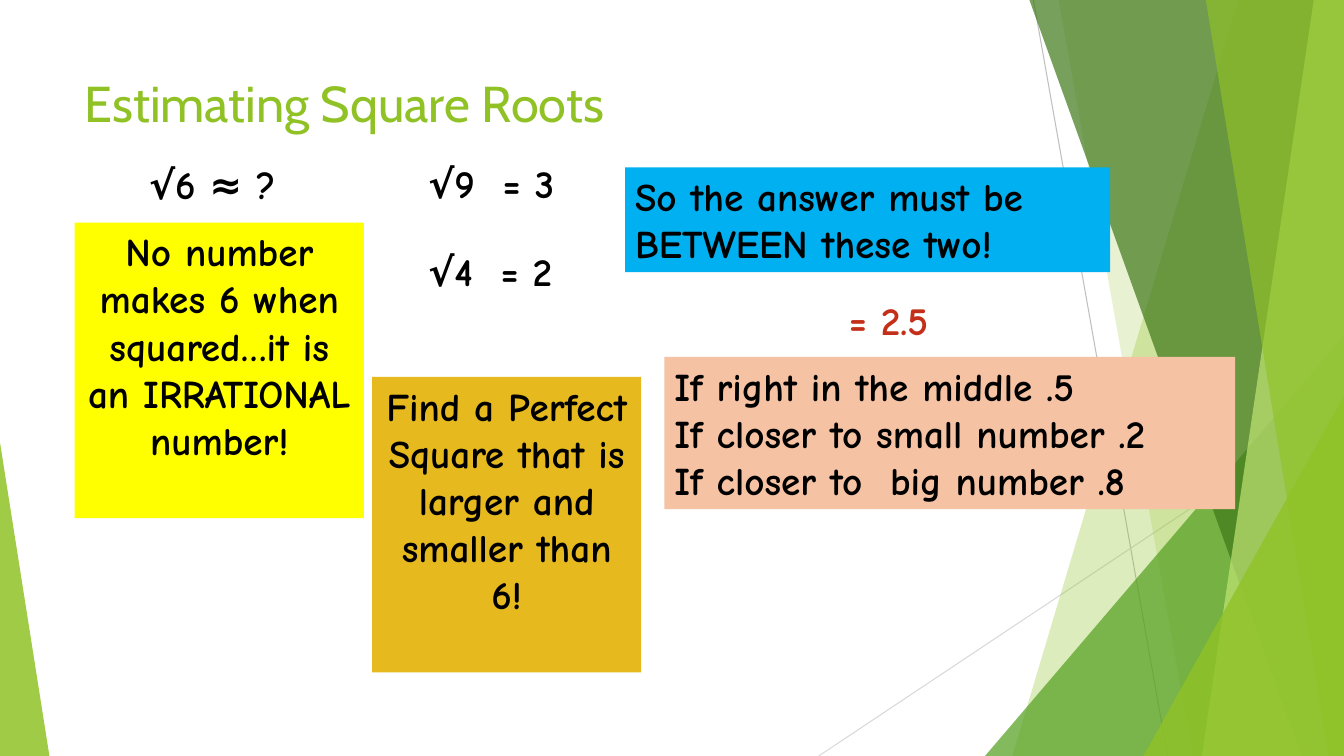
import pptx
import pptx.dml.color
import pptx.enum.shapes
import pptx.enum.text
import pptx.oxml.ns
import pptx.util
from lxml import etree

Inches = pptx.util.Inches
ALIGN = pptx.enum.text.PP_ALIGN
SHAPES = pptx.enum.shapes.MSO_SHAPE
WIDTH, HEIGHT = 13.33, 7.5

COLORS = {
    "green": "90C226",
    "leaf": "54A021",
    "forest": "3F7819",
    "lime": "C0E474",
    "gray": "BFBFBF",
    "light gray": "D9D9D9",
    "black": "000000",
    "red": "C42F1A",
    "yellow": "FFFF00",
    "gold": "E6B91E",
    "blue": "00B0F0",
    "peach": "F5C2A3",
}


class SlideBuilder:
    """Holds the style and the current slide, and adds elements to it."""

    title_font = "Cabin"
    body_font = "Comic Neue"
    title_size = 36
    body_size = 28

    def __init__(self, slide):
        self.slide = slide

    def color(self, name):
        return pptx.dml.color.RGBColor.from_string(COLORS[name])

    def paint(self, shape, color, opacity=100):
        shape.shadow.inherit = False
        shape.line.fill.background()
        shape.fill.solid()
        shape.fill.fore_color.rgb = self.color(color)
        if opacity < 100:
            qn = pptx.oxml.ns.qn
            fill_element = shape._element.spPr.find(qn("a:solidFill"))
            alpha = etree.SubElement(fill_element[0], qn("a:alpha"))
            alpha.set("val", str(opacity * 1000))

    def line(self, start, end, color):
        connector = self.slide.shapes.add_connector(
            pptx.enum.shapes.MSO_CONNECTOR.STRAIGHT,
            *map(Inches, (*start, *end)))
        connector.line.color.rgb = self.color(color)
        connector.line.width = pptx.util.Pt(0.75)
        properties = connector._element.spPr
        etree.SubElement(properties, pptx.oxml.ns.qn("a:effectLst"))

    def band(self, top_left, bottom_left, color, opacity):
        corners = [(WIDTH, 0), (WIDTH, HEIGHT), (bottom_left, HEIGHT)]
        builder = self.slide.shapes.build_freeform(Inches(top_left), 0)
        builder.add_line_segments(
            [(Inches(x), Inches(y)) for x, y in corners], close=True)
        self.paint(builder.convert_to_shape(), color, opacity)

    def triangle(self, left, top, width, apex, color, opacity):
        shape = self.slide.shapes.add_shape(
            SHAPES.ISOSCELES_TRIANGLE, Inches(left), Inches(top),
            Inches(width), Inches(HEIGHT - top))
        shape.adjustments[0] = apex
        self.paint(shape, color, opacity)

    def set_text(self, shape, lines, color, font, size, bold, align):
        frame = shape.text_frame
        frame.word_wrap = True
        frame.vertical_anchor = pptx.enum.text.MSO_ANCHOR.TOP
        frame.text = "\n".join(lines)
        for paragraph in frame.paragraphs:
            paragraph.alignment = align
            paragraph.font.name = font
            paragraph.font.size = pptx.util.Pt(size)
            paragraph.font.bold = bold
            paragraph.font.color.rgb = self.color(color)

    def title(self, text, box):
        shape = self.slide.shapes.add_textbox(*map(Inches, box))
        self.set_text(shape, [text], "green", self.title_font,
                      self.title_size, False, ALIGN.LEFT)

    def label(self, text, box, color="black"):
        shape = self.slide.shapes.add_textbox(*map(Inches, box))
        self.set_text(shape, [text], color, self.body_font,
                      self.body_size, True, ALIGN.LEFT)

    def note(self, lines, box, fill, align=ALIGN.LEFT):
        shape = self.slide.shapes.add_shape(
            SHAPES.RECTANGLE, *map(Inches, box))
        self.paint(shape, fill)
        self.set_text(shape, lines, "black", self.body_font,
                      self.body_size, True, align)


def main():
    presentation = pptx.Presentation()
    presentation.slide_width = Inches(WIDTH)
    presentation.slide_height = Inches(HEIGHT)
    page = SlideBuilder(
        presentation.slides.add_slide(presentation.slide_layouts[6]))

    page.line((10.25, 0), (11.58, HEIGHT), "gray")
    page.line((WIDTH, 4.03), (8.12, HEIGHT), "light gray")
    page.band(12.28, 10.04, "green", 30)
    page.band(10.5, 11.83, "green", 20)
    page.triangle(9.77, 3.33, 3.56, 1, "leaf", 72)
    page.band(10.21, 12.91, "forest", 70)
    page.band(13.03, 11.92, "lime", 70)
    page.band(11.96, 13.18, "green", 65)
    page.triangle(11.34, 3.93, 1.99, 1, "green", 80)
    page.triangle(0, 4.39, 0.49, 0, "green", 85)

    page.title("Estimating Square Roots", (0.74, 0.67, 9.4, 1.44))
    page.label("√6 ≈ ?", (1.38, 1.54, 2.22, 0.57))
    page.note(["No number makes 6 when squared…it is an IRRATIONAL number!"],
              (0.74, 2.21, 2.87, 2.93), "yellow", ALIGN.CENTER)
    page.label("√9  = 3", (4.15, 1.53, 2.22, 0.57))
    page.note(["Find a Perfect Square that is larger and smaller than 6!"],
              (3.69, 3.74, 2.67, 2.93), "gold", ALIGN.CENTER)
    page.note(["So the answer must be BETWEEN these two!"],
              (6.2, 1.66, 4.81, 1.04), "blue")
    page.label("= 2.5", (8.32, 2.89, 1.53, 0.57), "red")
    page.note(["If right in the middle .5",
               "If closer to small number .2",
               "If closer to  big number .8"],
              (6.59, 3.54, 5.66, 1.51), "peach")
    page.label("√4  = 2", (4.15, 2.4, 2.22, 0.57))

    presentation.save("out.pptx")


if __name__ == "__main__":
    main()
